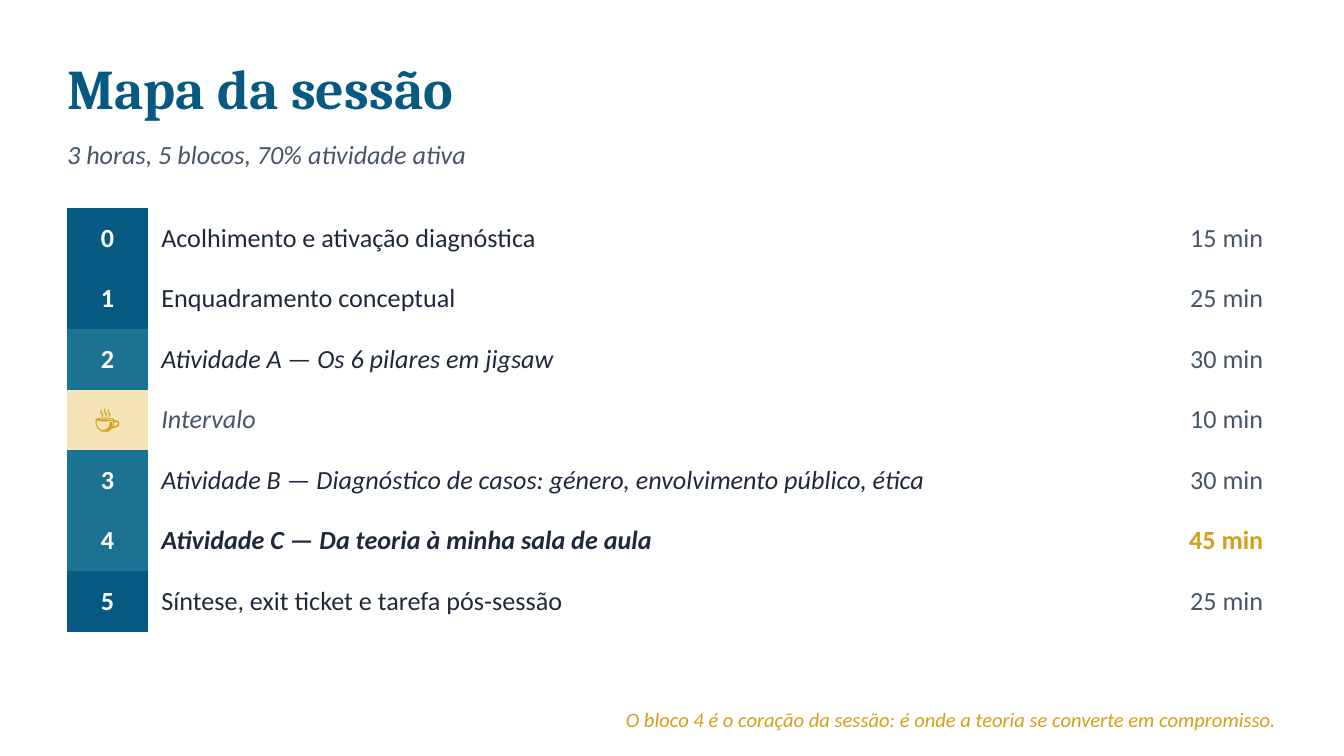
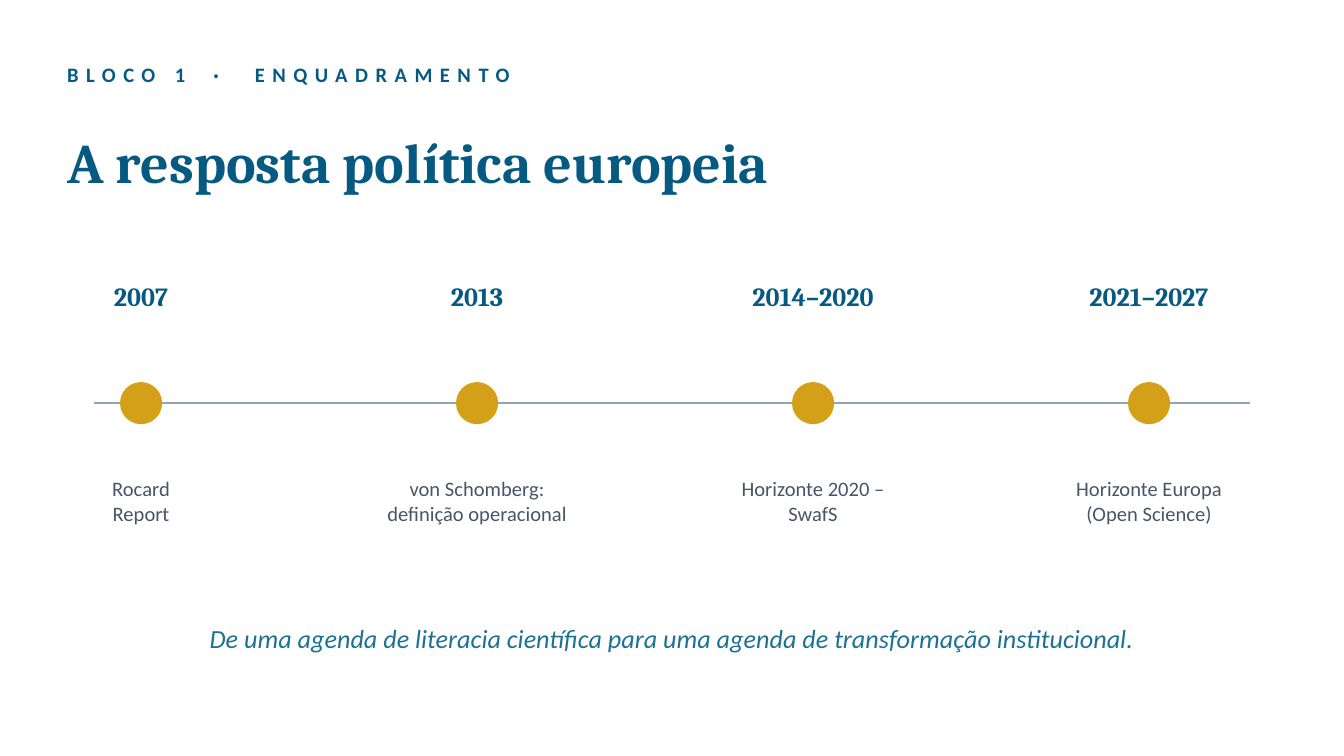
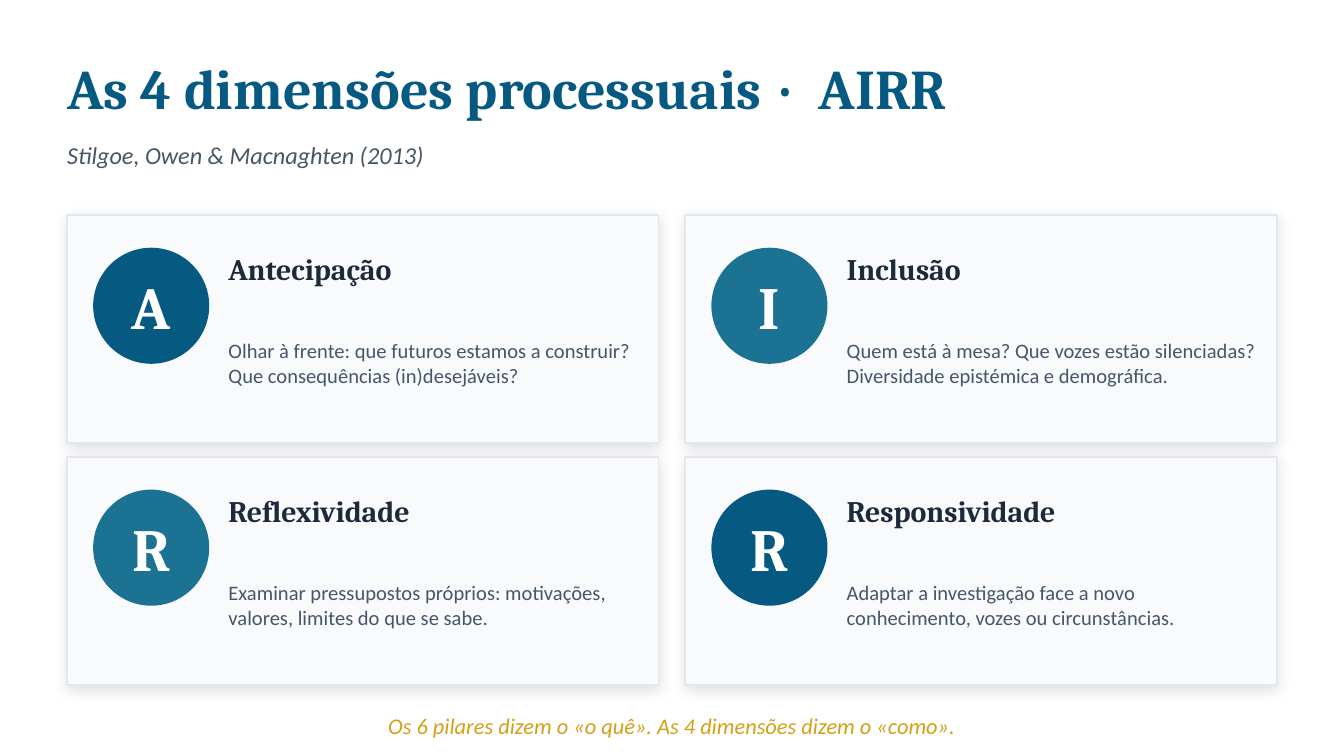
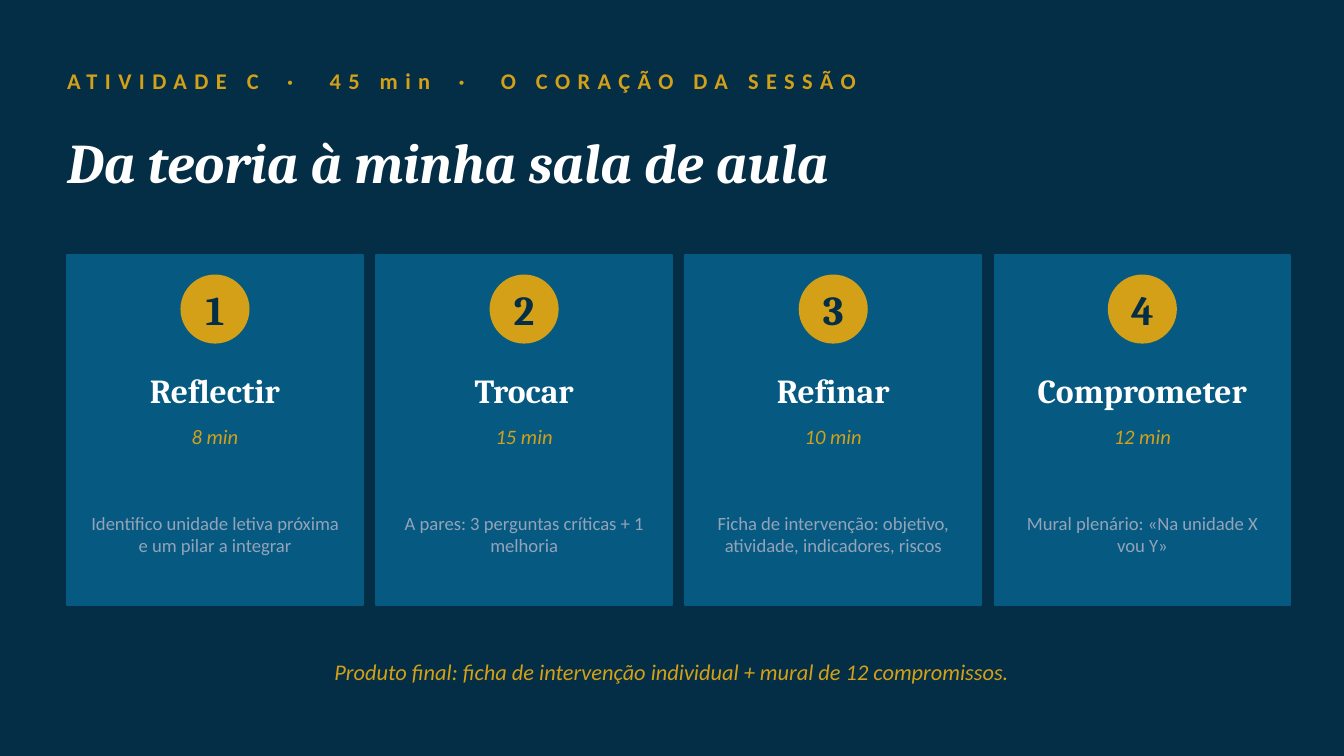
"""Builds four slides of a training session on responsible research."""
from lxml import etree
from pptx import Presentation
from pptx import util as u
from pptx.dml import color
from pptx.enum import shapes, text
from pptx.oxml import ns

NAVY, BLUE, TEAL, GOLD, CREAM = "032E45", "065A82", "1C7293", "D4A017", "F4E4B8"
WHITE, PAPER, BORDER, MIST, SLATE, INK = "FFFFFF", "F8FAFC", "E2E8F0", "94A3B8", "475569", "1E293B"
SERIF, SANS = "Cambria", "Calibri"
LEFT, CENTER, RIGHT = text.PP_ALIGN.LEFT, text.PP_ALIGN.CENTER, text.PP_ALIGN.RIGHT
OVAL, RECT = shapes.MSO_SHAPE.OVAL, shapes.MSO_SHAPE.RECTANGLE
MARGIN, CONTENT_WIDTH = 36, 648
SEPARATOR, SEPARATOR_GAP = " · ", 4.4
NO_STYLE_NO_GRID = "{2D5ABB26-0587-4C30-8999-92F81FD0307C}"

AGENDA = [
    ("0", BLUE, "Acolhimento e ativação diagnóstica", {}, "15 min"),
    ("1", BLUE, "Enquadramento conceptual", {}, "25 min"),
    ("2", TEAL, "Atividade A — Os 6 pilares em jigsaw", {"italic": True}, "30 min"),
    ("☕", CREAM, "Intervalo", {"italic": True, "color": SLATE}, "10 min"),
    ("3", TEAL, "Atividade B — Diagnóstico de casos: género, envolvimento público, ética",
     {"italic": True}, "30 min"),
    ("4", TEAL, "Atividade C — Da teoria à minha sala de aula",
     {"italic": True, "bold": True}, "45 min"),
    ("5", BLUE, "Síntese, exit ticket e tarefa pós-sessão", {}, "25 min"),
]
MILESTONES = [
    ("2007", ["Rocard", "Report"]),
    ("2013", ["von Schomberg:", "definição operacional"]),
    ("2014–2020", ["Horizonte 2020 –", "SwafS"]),
    ("2021–2027", ["Horizonte Europa", "(Open Science)"]),
]
DIMENSIONS = [
    ("A", BLUE, "Antecipação",
     "Olhar à frente: que futuros estamos a construir? Que consequências (in)desejáveis?"),
    ("I", TEAL, "Inclusão",
     "Quem está à mesa? Que vozes estão silenciadas? Diversidade epistémica e demográfica."),
    ("R", TEAL, "Reflexividade",
     "Examinar pressupostos próprios: motivações, valores, limites do que se sabe."),
    ("R", BLUE, "Responsividade",
     "Adaptar a investigação face a novo conhecimento, vozes ou circunstâncias."),
]
STEPS = [
    ("Reflectir", "8 min", "Identifico unidade letiva próxima e um pilar a integrar"),
    ("Trocar", "15 min", "A pares: 3 perguntas críticas + 1 melhoria"),
    ("Refinar", "10 min", "Ficha de intervenção: objetivo, atividade, indicadores, riscos"),
    ("Comprometer", "12 min", "Mural plenário: «Na unidade X vou Y»"),
]


def rgb(hex_code):
    """Turn a hex string into a colour."""
    return color.RGBColor.from_string(hex_code)


def style(size, hex_code, name=SANS, **extra):
    """Collect the format values of a piece of text."""
    return {"size": u.Pt(size), "color": hex_code, "name": name, **extra}


def add_run(paragraph, words, look, spacing=0):
    """Add a run with its font values and letter spacing."""
    run = paragraph.add_run()
    run.text = words
    for attribute, value in look.items():
        if attribute == "color":
            run.font.color.rgb = rgb(value)
        else:
            setattr(run.font, attribute, value)
    if spacing:
        run._r.get_or_add_rPr().set("spc", str(round(spacing * 100)))


def write(frame, lines, look, align=LEFT, spacing=0):
    """Write one paragraph per line, with wider gaps around separators."""
    for index, line in enumerate(lines):
        paragraph = frame.add_paragraph() if index else frame.paragraphs[0]
        paragraph.alignment = align
        for part, words in enumerate(line.split(SEPARATOR)):
            if part:
                add_run(paragraph, SEPARATOR, look, spacing + SEPARATOR_GAP)
            add_run(paragraph, words, look, spacing)


def add_text(slide, box, lines, look, align=LEFT, spacing=0):
    """Add a wrapped, vertically centred text box without insets."""
    frame = slide.shapes.add_textbox(*map(u.Pt, box)).text_frame
    layout = {"word_wrap": True, "vertical_anchor": text.MSO_ANCHOR.MIDDLE, "margin_left": 0,
              "margin_right": 0, "margin_top": 0, "margin_bottom": 0}
    for attribute, value in layout.items():
        setattr(frame, attribute, value)
    write(frame, [lines] if isinstance(lines, str) else lines, look, align, spacing)


def add_figure(slide, preset, box, fill, border=None):
    """Add a flat preset shape with a thin border."""
    figure = slide.shapes.add_shape(preset, *map(u.Pt, box))
    figure.shadow.inherit = False
    figure.fill.solid()
    figure.fill.fore_color.rgb = rgb(fill)
    figure.line.color.rgb = rgb(border or fill)
    figure.line.width = u.Pt(1)
    return figure


def add_badge(slide, box, fill, letter, look):
    """Add a disc with a letter or number on it."""
    add_figure(slide, OVAL, box, fill)
    add_text(slide, box, letter, look, CENTER)


def add_soft_shadow(figure):
    """Give a shape a faint shadow below it."""
    effects = figure._element.spPr.find(ns.qn("a:effectLst"))
    shadow = etree.SubElement(effects, ns.qn("a:outerShdw"), blurRad=str(u.Pt(8)),
                              dist=str(u.Pt(2)), dir="5400000", algn="bl", rotWithShape="0")
    black = etree.SubElement(shadow, ns.qn("a:srgbClr"), val="000000")
    etree.SubElement(black, ns.qn("a:alpha"), val="12000")


def add_axis(slide, start, end, y):
    """Add the horizontal line of the timeline."""
    axis = slide.shapes.add_connector(shapes.MSO_CONNECTOR.STRAIGHT,
                                      u.Pt(start), u.Pt(y), u.Pt(end), u.Pt(y))
    axis.line.color.rgb = rgb(MIST)
    axis.line.width = u.Pt(1)
    etree.SubElement(axis._element.spPr, ns.qn("a:effectLst"))


def add_title(slide, words, top, height, **extra):
    """Add the slide title."""
    look = style(30, BLUE, SERIF, bold=True) | extra
    add_text(slide, (MARGIN, top, CONTENT_WIDTH, height), words, look)


def add_subtitle(slide, words, size):
    """Add the italic line below the title."""
    add_text(slide, (MARGIN, 68.4, CONTENT_WIDTH, 28.8), words, style(size, SLATE, italic=True))


def add_kicker(slide, words, top, size, hex_code):
    """Add the letter-spaced line above the title."""
    add_text(slide, (MARGIN, top, CONTENT_WIDTH, 28.8), words,
             style(size, hex_code, bold=True), spacing=4)


def add_closing(slide, words, top, height, size=12, hex_code=GOLD, align=CENTER):
    """Add the italic closing sentence."""
    add_text(slide, (MARGIN, top, CONTENT_WIDTH, height), words,
             style(size, hex_code, italic=True), align)


def add_slide(deck, background=WHITE):
    """Add a blank slide with a plain background."""
    slide = deck.slides.add_slide(deck.slide_layouts[6])
    slide.background.fill.solid()
    slide.background.fill.fore_color.rgb = rgb(background)
    return slide


def fill_cell(cell, words, look, align, fill=None):
    """Write a table cell and set its fill."""
    cell.vertical_anchor = text.MSO_ANCHOR.MIDDLE
    if fill:
        cell.fill.solid()
        cell.fill.fore_color.rgb = rgb(fill)
    else:
        cell.fill.background()
    write(cell.text_frame, [words], look, align)


def add_agenda(slide):
    """Add the table of session blocks."""
    box = map(u.Pt, (MARGIN, 111.6, CONTENT_WIDTH, 32.4 * len(AGENDA)))
    agenda = slide.shapes.add_table(len(AGENDA), 3, *box).table
    agenda.first_row = agenda.horz_banding = False
    agenda._tbl.tblPr.find(ns.qn("a:tableStyleId")).text = NO_STYLE_NO_GRID
    for column, width in zip(agenda.columns, (43.2, 518.4, 86.4)):
        column.width = u.Pt(width)
    for row, (number, fill, topic, emphasis, duration) in enumerate(AGENDA):
        number_color = GOLD if fill == CREAM else WHITE
        is_key = emphasis.get("bold", False)
        fill_cell(agenda.cell(row, 0), number, style(14, number_color, bold=True), CENTER, fill)
        fill_cell(agenda.cell(row, 1), topic, style(14, INK) | emphasis, LEFT)
        fill_cell(agenda.cell(row, 2), duration,
                  style(14, GOLD if is_key else SLATE, bold=is_key), RIGHT)


def build_session_map(deck):
    """Build the session map."""
    slide = add_slide(deck)
    add_title(slide, "Mapa da sessão", 25.2, 43.2)
    add_subtitle(slide, "3 horas, 5 blocos, 70% atividade ativa", 14)
    add_agenda(slide)
    add_closing(slide, "O bloco 4 é o coração da sessão: é onde a teoria se converte em compromisso.",
                370.8, 28.8, 11, align=RIGHT)


def build_timeline(deck):
    """Build the timeline of European policy."""
    slide = add_slide(deck)
    add_kicker(slide, "BLOCO 1 · ENQUADRAMENTO", 25.2, 11, BLUE)
    add_title(slide, "A resposta política europeia", 61.2, 50.4)
    add_axis(slide, 50.4, 669.6, 216)
    for index, (years, event) in enumerate(MILESTONES):
        center = 75.6 + 180 * index
        add_figure(slide, OVAL, (center - 10.8, 205.2, 21.6, 21.6), GOLD)
        add_text(slide, (center - 46.8, 144, 93.6, 28.8), years,
                 style(14, BLUE, SERIF, bold=True), CENTER)
        add_text(slide, (center - 61.2, 237.6, 122.4, 61.2), event, style(11, SLATE), CENTER)
    add_closing(slide, "De uma agenda de literacia científica para uma agenda de "
                "transformação institucional.", 324, 36, 14, TEAL)


def build_dimensions(deck):
    """Build the two-by-two grid of dimensions."""
    slide = add_slide(deck)
    add_title(slide, "As 4 dimensões processuais · AIRR", 25.2, 43.2)
    add_subtitle(slide, "Stilgoe, Owen & Macnaghten (2013)", 13)
    for index, (letter, fill, name, question) in enumerate(DIMENSIONS):
        row, column = divmod(index, 2)
        x, y = MARGIN + 331.2 * column, 115.2 + 129.6 * row
        add_soft_shadow(add_figure(slide, RECT, (x, y, 316.8, 122.4), PAPER, BORDER))
        add_badge(slide, (x + 14.4, y + 18, 61.2, 61.2), fill, letter,
                  style(32, WHITE, SERIF, bold=True))
        add_text(slide, (x + 86.4, y + 14.4, 223.2, 28.8), name, style(16, INK, SERIF, bold=True))
        add_text(slide, (x + 86.4, y + 39.6, 223.2, 79.2), question, style(11, SLATE))
    add_closing(slide, "Os 6 pilares dizem o «o quê». As 4 dimensões dizem o «como».", 378, 21.6)


def build_activity(deck):
    """Build the four steps of activity C."""
    slide = add_slide(deck, NAVY)
    add_kicker(slide, "ATIVIDADE C · 45 min · O CORAÇÃO DA SESSÃO", 28.8, 12, GOLD)
    add_title(slide, "Da teoria à minha sala de aula", 61.2, 50.4, color=WHITE, italic=True)
    y = 136.8
    for index, (name, duration, task) in enumerate(STEPS):
        x = MARGIN + 165.6 * index
        add_figure(slide, RECT, (x, y, 158.4, 187.2), BLUE)
        add_badge(slide, (x + 61.2, y + 10.8, 36, 36), GOLD, str(index + 1),
                  style(22, NAVY, SERIF, bold=True))
        add_text(slide, (x + 7.2, y + 57.6, 144, 28.8), name,
                 style(18, WHITE, SERIF, bold=True), CENTER)
        add_text(slide, (x + 7.2, y + 86.4, 144, 21.6), duration,
                 style(11, GOLD, italic=True), CENTER)
        add_text(slide, (x + 10.8, y + 115.2, 136.8, 68.4), task, style(10, MIST), CENTER)
    add_closing(slide, "Produto final: ficha de intervenção individual + mural de 12 compromissos.",
                349.2, 21.6)


def main():
    """Build and save the deck."""
    deck = Presentation()
    deck.slide_width, deck.slide_height = u.Pt(720), u.Pt(405)
    build_session_map(deck)
    build_timeline(deck)
    build_dimensions(deck)
    build_activity(deck)
    deck.save("out.pptx")


if __name__ == "__main__":
    main()
